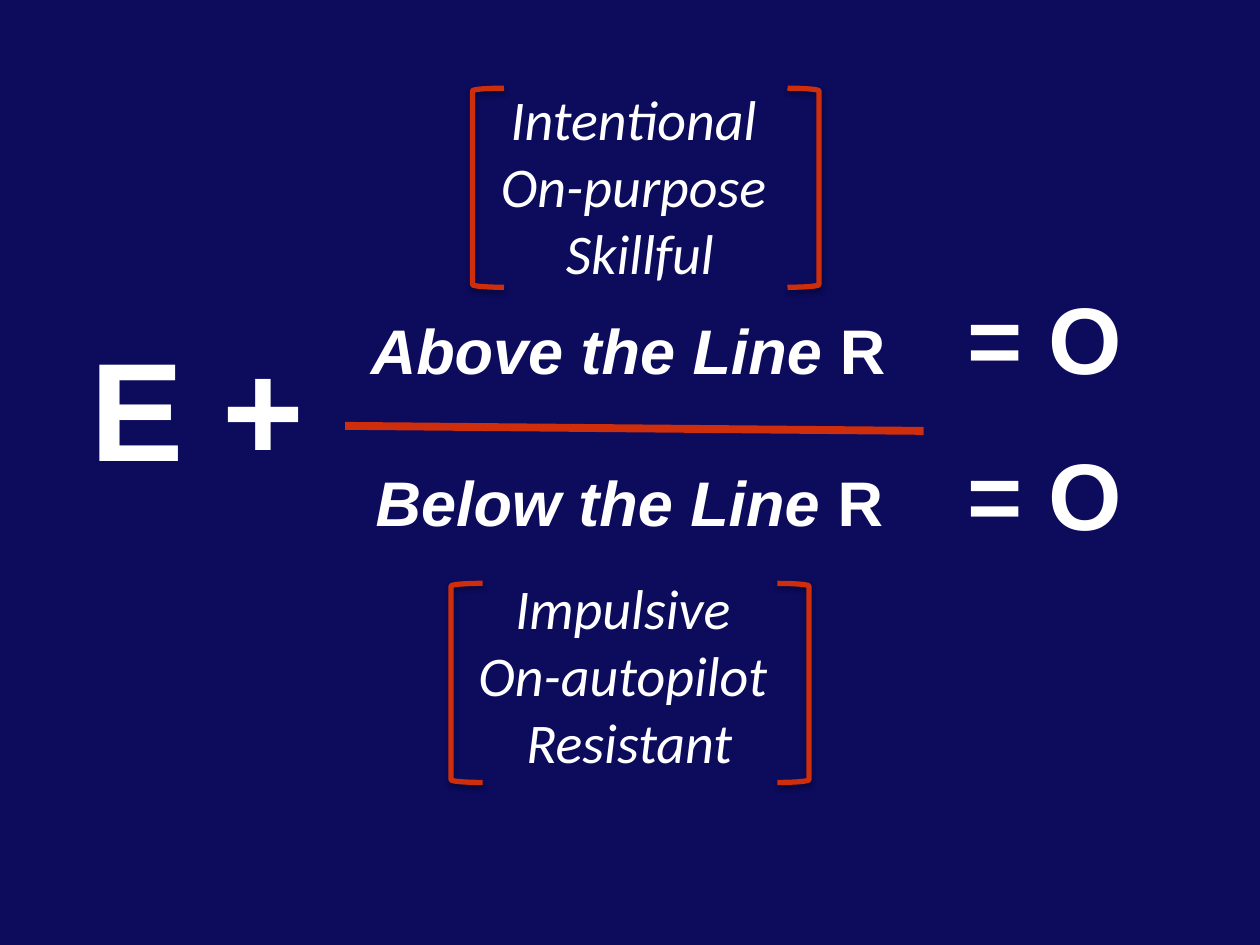
from lxml import etree
from pptx import Presentation
from pptx.dml.color import RGBColor
from pptx.enum import shapes, text
from pptx.oxml import ns
from pptx.util import Pt

COLORS = {"navy": "0C0B5C", "white": "FFFFFF", "red": "CF2E0D", "shadow": "000000"}
BRACKET_WIDTH, BRACKET_HEIGHT = 18, 113.76


def color(name):
    return RGBColor.from_string(COLORS[name])


def add_text(slide, box, paragraphs, size, font="Arial", bold=False, italic=None,
             align=text.PP_ALIGN.LEFT):
    """Add white text; each paragraph is a list of its run texts."""
    label = slide.shapes.add_textbox(*map(Pt, box))
    frame = label.text_frame
    frame.word_wrap = False
    frame.auto_size = text.MSO_AUTO_SIZE.SHAPE_TO_FIT_TEXT
    for index, words in enumerate(paragraphs):
        paragraph = frame.add_paragraph() if index else frame.paragraphs[0]
        paragraph.alignment = align
        for word in words:
            paragraph.add_run().text = word
        paragraph.font.name = font
        paragraph.font.size = Pt(size)
        paragraph.font.bold = bold
        paragraph.font.italic = italic
        paragraph.font.color.rgb = color("white")
    return frame


def add_event(slide):
    frame = add_text(slide, (41.76, 180, 142.56, 104.4), [[" ", "E +"]], 80, bold=True)
    frame.paragraphs[0].runs[0].font.size = Pt(10.5)


def add_response(slide, box, phrase):
    """Add a bold italic phrase followed by an upright R."""
    frame = add_text(slide, box, [[phrase, "R"]], 36, bold=True,
                     align=text.PP_ALIGN.CENTER)
    frame.paragraphs[0].runs[0].font.italic = True


def add_outcome(slide, top):
    add_text(slide, (545.76, top, 103.68, 72.72), [["= O"]], 54, bold=True)


def add_fraction_line(slide):
    line = slide.shapes.add_connector(
        shapes.MSO_CONNECTOR.STRAIGHT, Pt(527.76), Pt(246.24), Pt(197.28), Pt(243.36))
    line.line.color.rgb = color("red")
    line.line.width = Pt(4.5)
    etree.SubElement(line._element.spPr, ns.qn("a:effectLst"))


def add_bracket(slide, kind, left, top):
    bracket = slide.shapes.add_shape(
        kind, Pt(left), Pt(top), Pt(BRACKET_WIDTH), Pt(BRACKET_HEIGHT))
    bracket.fill.background()
    bracket.line.color.rgb = color("red")
    bracket.line.width = Pt(3)
    bracket.shadow.inherit = False
    effects = bracket._element.spPr.find(ns.qn("a:effectLst"))
    shadow = etree.SubElement(
        effects, ns.qn("a:outerShdw"), blurRad=str(Pt(3.1)), dist=str(Pt(1.8)),
        dir="5400000", rotWithShape="0")
    tint = etree.SubElement(shadow, ns.qn("a:srgbClr"), val=COLORS["shadow"])
    etree.SubElement(tint, ns.qn("a:alpha"), val="35000")


def add_traits(slide, box, traits, bracket_lefts, bracket_top):
    """Add a centred list of traits between two square brackets."""
    add_text(slide, box, [[trait] for trait in traits], 32, font="Calibri",
             italic=True, align=text.PP_ALIGN.CENTER)
    kinds = (shapes.MSO_SHAPE.LEFT_BRACKET, shapes.MSO_SHAPE.RIGHT_BRACKET)
    for kind, left in zip(kinds, bracket_lefts):
        add_bracket(slide, kind, left, bracket_top)


def main():
    deck = Presentation()
    deck.slide_width, deck.slide_height = Pt(720), Pt(540)
    slide = deck.slides.add_slide(deck.slide_layouts[6])
    slide.background.fill.solid()
    slide.background.fill.fore_color.rgb = color("navy")

    add_event(slide)
    add_response(slide, (203.04, 174.24, 311.76, 51.12), "Above the Line ")
    add_response(slide, (205.92, 261.36, 307.44, 51.12), "Below the Line ")
    for top in (156.24, 245.52):
        add_outcome(slide, top)
    add_fraction_line(slide)
    add_traits(slide, (264.96, 324, 189.36, 123.84),
               ("Impulsive ", "On-autopilot ", "Resistant"), (257.76, 444.24), 333.36)
    add_traits(slide, (277.92, 44.64, 175.68, 123.84),
               ("Intentional ", "On-purpose ", "Skillful"), (270, 450), 50.4)
    deck.save("out.pptx")


if __name__ == "__main__":
    main()
